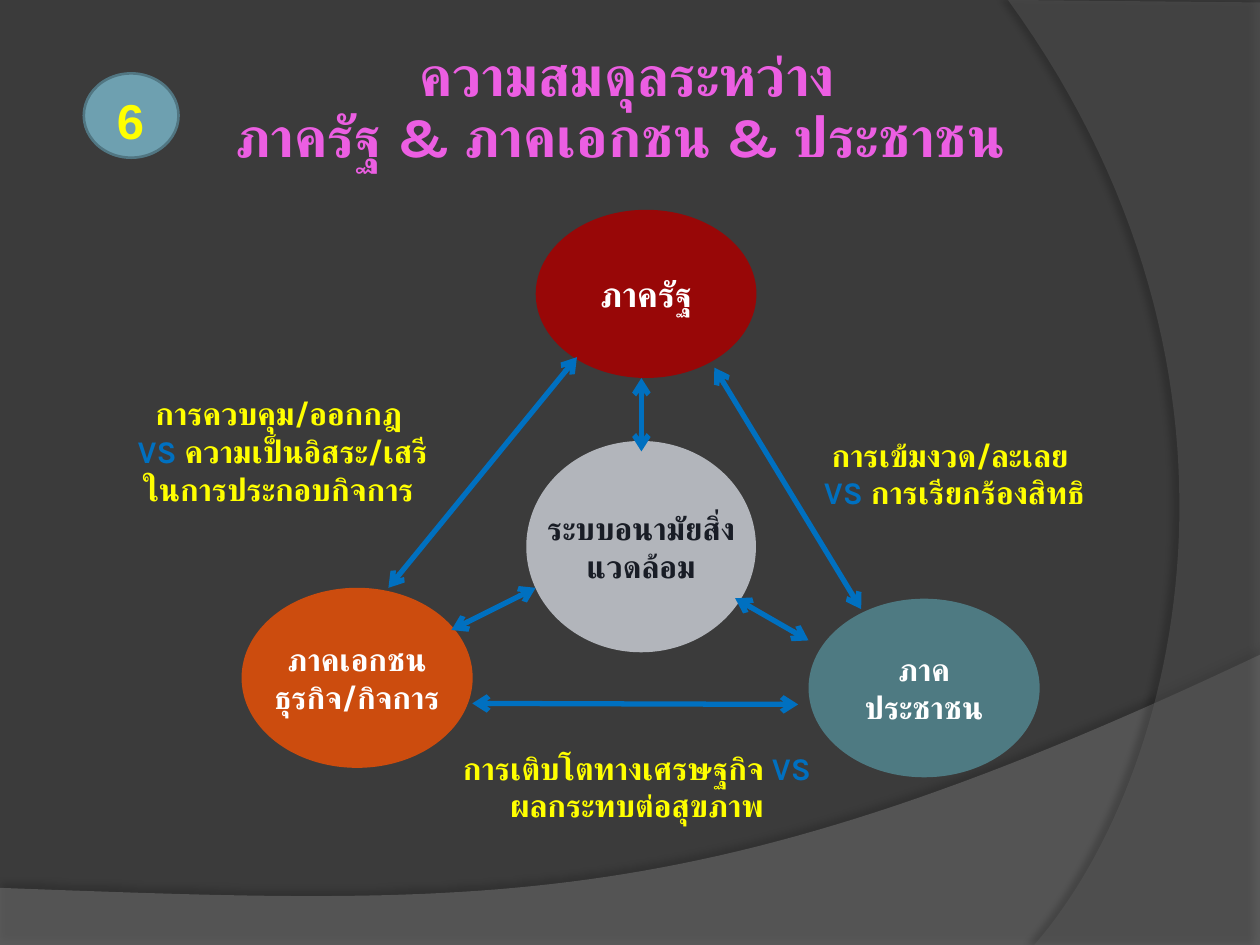
from dataclasses import dataclass

from lxml.etree import SubElement
from pptx import Presentation
from pptx.dml.color import RGBColor
from pptx.enum.shapes import MSO_CONNECTOR, MSO_SHAPE
from pptx.enum.text import MSO_ANCHOR, MSO_AUTO_SIZE, PP_ALIGN
from pptx.oxml.ns import qn
from pptx.util import Cm, Pt

YELLOW, BLUE, WHITE = "FFFF00", "0070C0", "FFFFFF"
Point = tuple[float, float]
Span = tuple[str, str]


@dataclass
class Box:
    left: float
    top: float
    width: float
    height: float

    def lengths(self) -> list[Cm]:
        return [Cm(value) for value in (self.left, self.top, self.width, self.height)]


@dataclass
class Sector:
    box: Box
    fill: str
    text: str
    size: int = 18
    color: str = WHITE


@dataclass
class Caption:
    box: Box
    spans: list[Span]
    size: int = 18
    font: str = "Karla"
    inset: float = 0.1


@dataclass
class Wave:
    """Corner points; the last one starts a Bezier curve that ends the outline."""
    corners: list[Point]
    curve: list[Point]
    fill: str
    opacity: int
    shadow_opacity: int
    shadow_direction: int


SECTORS = [
    Sector(Box(10.8, 4.23, 4.45, 3.39), "980707", "ภาครัฐ", 20),
    Sector(Box(10.61, 8.89, 4.63, 4.26), "B2B5BB", "ระบบอนามัยสิ่ง\nแวดล้อม", color="191D26"),
    Sector(Box(4.87, 11.85, 4.66, 3.63), "CC4C0E", "ภาคเอกชน\nธุรกิจ/กิจการ"),
    Sector(Box(16.3, 12.07, 4.66, 3.6), "4E7A82", "ภาค\nประชาชน"),
]
ARROWS = [
    (14.4, 7.41, 17.36, 12.28),
    (7.83, 11.85, 11.63, 7.2),
    (12.93, 7.62, 12.93, 9.1),
    (9.52, 14.18, 16.09, 14.2),
    (10.8, 11.85, 9.1, 12.7),
    (14.82, 12.06, 16.3, 12.91),
]
VERSUS = ("VS ", BLUE)
CAPTIONS = [
    Caption(Box(9.17, 14.99, 7.34, 1.73),
            [("การเติบโตทางเศรษฐกิจ ", YELLOW), VERSUS, ("ผลกระทบต่อสุขภาพ", YELLOW)]),
    Caption(Box(15.88, 8.68, 6.55, 1.73),
            [("การเข้มงวด/ละเลย\n ", YELLOW), VERSUS, ("การเรียกร้องสิทธิ", YELLOW)]),
    Caption(Box(1.95, 7.83, 7.34, 2.51),
            [("การควบคุม/ออกกฎ\n ", YELLOW), VERSUS,
             ("ความเป็นอิสระ/เสรี\nในการประกอบกิจการ", YELLOW)]),
]
BADGE = Box(1.69, 1.48, 1.91, 1.7)
BADGE_NUMBER = Caption(Box(1.78, 1.69, 1.7, 1.45), [("6", YELLOW)], 28, "Arial", 0.13)
WAVES = [
    Wave([(0, 17.9), (0, 19.05), (25.4, 19.05), (25.4, 13.2)],
         [(14.2, 18.51), (9.93, 18.26), (0, 17.9)], "7F7F7F", 45, 35, 270),
    Wave([(25.4, 0.05), (25.4, 19.05), (20.85, 19.05)],
         [(23.75, 15.72), (25.86, 7.62), (20.32, 0)], "5E5E5E", 40, 45, 180),
]


def rgb(color: str) -> RGBColor:
    return RGBColor.from_string(color)


def paint(shape, color: str) -> None:
    shape.shadow.inherit = False
    shape.fill.solid()
    shape.fill.fore_color.rgb = rgb(color)
    shape.line.fill.background()


def write(frame, spans: list[Span], size: int, font: str = "Karla", inset: float = 0.1):
    """Fill a text frame with centred bold spans, breaking lines at newlines."""
    frame.margin_left = frame.margin_right = Cm(2 * inset if font == "Arial" else inset)
    frame.margin_top = frame.margin_bottom = Cm(inset)
    frame.vertical_anchor = MSO_ANCHOR.MIDDLE
    para = frame.paragraphs[0]
    para.alignment = PP_ALIGN.CENTER
    for text, color in spans:
        for number, line in enumerate(text.split("\n")):
            if number:
                para.add_line_break()
            span = para.add_run()
            span.text = line
            span.font.size = Pt(size)
            span.font.bold = True
            span.font.color.rgb = rgb(color)
            span.font.name = font
            for script in ("a:ea", "a:cs"):
                SubElement(span.font._element, qn(script), typeface=font)
    return para


def add_wave(page, wave: Wave) -> None:
    start = wave.corners[-1]
    steps = 60
    curve = []
    for step in range(1, steps + 1):
        t = step / steps
        weights = ((1 - t) ** 3, 3 * t * (1 - t) ** 2, 3 * t * t * (1 - t), t ** 3)
        controls = [start, *wave.curve]
        curve.append(tuple(sum(w * p[axis] for w, p in zip(weights, controls))
                           for axis in (0, 1)))
    first, *rest = [(Cm(x), Cm(y)) for x, y in wave.corners + curve]
    builder = page.shapes.build_freeform(*first)
    builder.add_line_segments(rest, close=True)
    shape = builder.convert_to_shape()
    paint(shape, wave.fill)
    properties = shape._element.spPr
    fill_color = properties.find(qn("a:solidFill"))[0]
    SubElement(fill_color, qn("a:alpha"), val=str(wave.opacity * 1000))
    shadow = SubElement(properties.find(qn("a:effectLst")), qn("a:outerShdw"),
                        blurRad=str(Pt(4)), dist=str(Pt(4)),
                        dir=str(wave.shadow_direction * 60000), rotWithShape="0")
    shadow_color = SubElement(shadow, qn("a:srgbClr"), val="000000")
    SubElement(shadow_color, qn("a:alpha"), val=str(wave.shadow_opacity * 1000))
    page.shapes.title._element.addprevious(shape._element)


def add_sector(page, sector: Sector) -> None:
    oval = page.shapes.add_shape(MSO_SHAPE.OVAL, *sector.box.lengths())
    paint(oval, sector.fill)
    write(oval.text_frame, [(sector.text, sector.color)], sector.size)
    oval.text_frame.word_wrap = False


def add_arrow(page, ends: tuple[float, float, float, float]) -> None:
    arrow = page.shapes.add_connector(MSO_CONNECTOR.STRAIGHT, *[Cm(end) for end in ends])
    arrow.line.color.rgb = rgb(BLUE)
    arrow.line.width = Pt(3)
    for tip in ("a:headEnd", "a:tailEnd"):
        SubElement(arrow.line._get_or_add_ln(), qn(tip), type="arrow")
    SubElement(arrow._element.spPr, qn("a:effectLst"))


def add_caption(page, caption: Caption) -> None:
    frame = page.shapes.add_textbox(*caption.box.lengths()).text_frame
    frame.word_wrap = True
    frame.auto_size = MSO_AUTO_SIZE.SHAPE_TO_FIT_TEXT
    write(frame, caption.spans, caption.size, caption.font, caption.inset)


def add_badge(page) -> None:
    oval = page.shapes.add_shape(MSO_SHAPE.OVAL, *BADGE.lengths())
    paint(oval, "6EA0B0")
    oval.line.color.rgb = rgb("517682")
    oval.line.width = Pt(1.5)
    add_caption(page, BADGE_NUMBER)


def main() -> None:
    deck = Presentation()
    deck.slide_width, deck.slide_height = Cm(25.4), Cm(19.05)
    page = deck.slides.add_slide(deck.slide_layouts[5])
    page.background.fill.solid()
    page.background.fill.fore_color.rgb = rgb("3B3B3B")

    title = page.shapes.title
    title.left, title.top, title.width, title.height = Box(0.64, 0.84, 24, 2.67).lengths()
    title.text_frame.auto_size = MSO_AUTO_SIZE.NONE
    heading = "ความสมดุลระหว่าง\nภาครัฐ & ภาคเอกชน & ประชาชน "
    write(title.text_frame, [(heading, "EC5EE2")], 32, inset=0.13).line_spacing = Pt(35)

    for wave in WAVES:
        add_wave(page, wave)
    for sector in SECTORS:
        add_sector(page, sector)
    for ends in ARROWS:
        add_arrow(page, ends)
    for caption in CAPTIONS:
        add_caption(page, caption)
    add_badge(page)
    deck.save("out.pptx")


if __name__ == "__main__":
    main()
